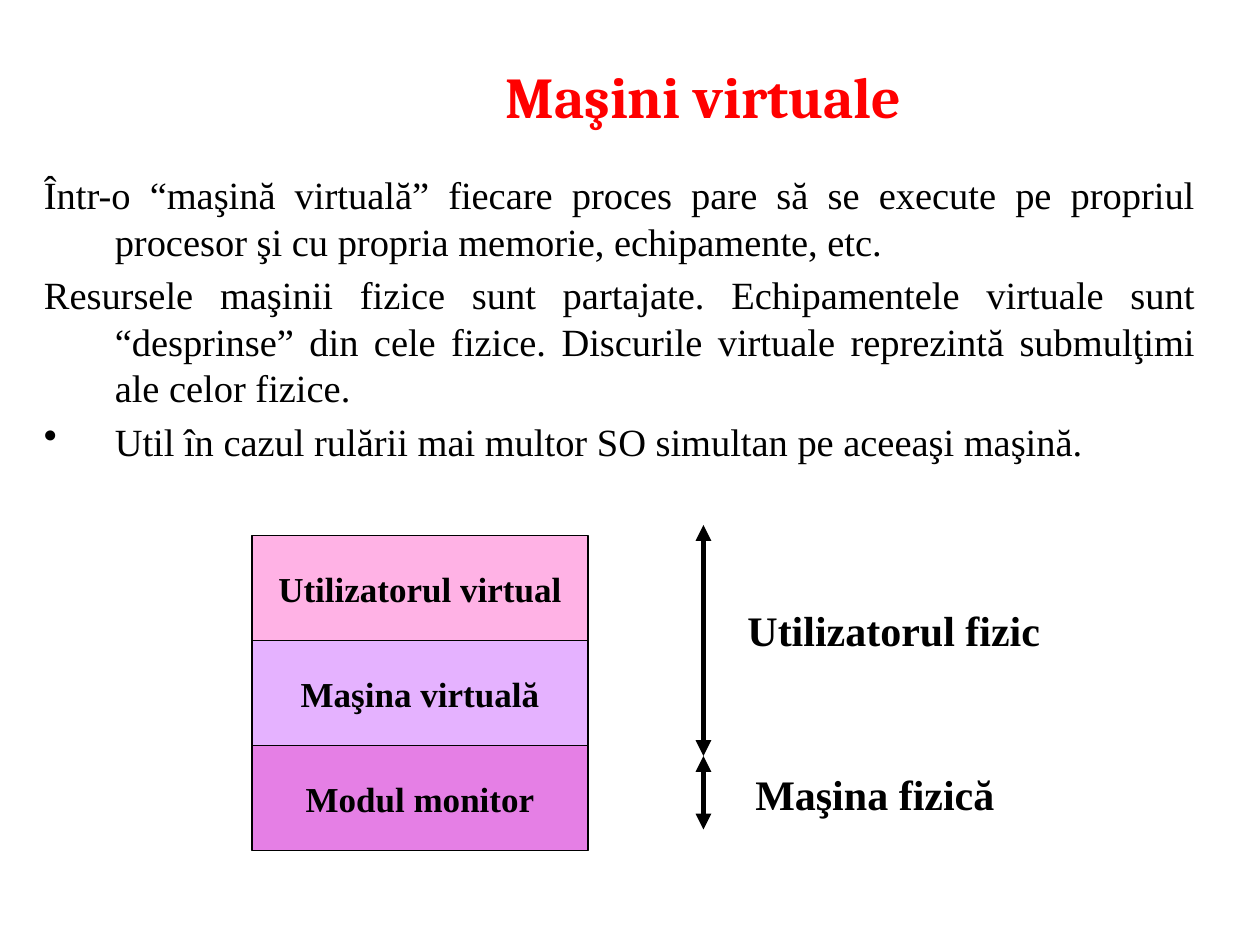
from pptx import Presentation
from pptx.dml.color import RGBColor as Rgb
from pptx.enum.shapes import MSO_CONNECTOR as Conn, MSO_SHAPE as Form
from pptx.enum.text import MSO_ANCHOR as Anchor, MSO_AUTO_SIZE as Auto, PP_ALIGN as Align
from pptx.oxml.ns import qn
from pptx.util import Pt
from lxml.etree import SubElement as Sub

HUES = {"ink": "000000", "title": "FF0000", "user": "FF66CC",
        "virtual": "CC66FF", "monitor": "CC00CC"}
SERIF = "Times New Roman"
HANG = 40.5


class Deck:
    def __init__(self, wide, high):
        self.file = Presentation()
        self.file.slide_width, self.file.slide_height = Pt(wide), Pt(high)
        self.page = self.file.slides.add_slide(self.file.slide_layouts[5])
        self.shapes = self.page.shapes

    def hue(self, name):
        return Rgb.from_string(HUES[name])

    def style(self, para, size, bold=True, align=Align.LEFT, face=SERIF, hue="ink"):
        para.alignment = align
        font = para.font
        font.name, font.size, font.bold = face, Pt(size), bold
        font.color.rgb = self.hue(hue)

    def title(self, text, *area):
        box = self.shapes.title
        box.left, box.top, box.width, box.height = map(Pt, area)
        frame = box.text_frame
        frame.text = text
        frame.vertical_anchor = Anchor.TOP
        frame.auto_size = Auto.SHAPE_TO_FIT_TEXT
        self.style(frame.paragraphs[0], 33, True, Align.CENTER, "Cambria", "title")

    def body(self, items, *area):
        frame = self.shapes.add_textbox(*map(Pt, area)).text_frame
        frame.word_wrap = True
        frame.margin_top = Pt(8)
        for i, (text, dot) in enumerate(items):
            para = frame.add_paragraph() if i else frame.paragraphs[0]
            para.text = text
            if i:
                para.space_before = Pt(4.4)
            props = para._p.get_or_add_pPr()
            props.set("marL", str(Pt(HANG)))
            props.set("indent", str(Pt(-HANG)))
            if dot:
                Sub(props, qn("a:buChar")).set("char", "•")
            self.style(para, 22, False, Align.JUSTIFY)

    def label(self, text, *area):
        frame = self.shapes.add_textbox(*map(Pt, area)).text_frame
        frame.word_wrap = False
        frame.auto_size = Auto.SHAPE_TO_FIT_TEXT
        frame.text = text
        self.style(frame.paragraphs[0], 24)

    def block(self, text, hue, *area):
        box = self.shapes.add_shape(Form.RECTANGLE, *map(Pt, area))
        box.shadow.inherit = False
        box.fill.solid()
        box.fill.fore_color.rgb = self.hue(hue)
        tint = box._element.spPr.find(qn("a:solidFill"))[0]
        Sub(tint, qn("a:alpha")).set("val", "50000")
        box.line.color.rgb = self.hue("ink")
        box.line.width = Pt(0.75)
        frame = box.text_frame
        frame.text = text
        frame.word_wrap = False
        frame.vertical_anchor = Anchor.MIDDLE
        self.style(frame.paragraphs[0], 20, True, Align.CENTER)

    def span(self, x, top, end):
        line = self.shapes.add_connector(Conn.STRAIGHT, Pt(x), Pt(top), Pt(x), Pt(end))
        line.line.color.rgb = self.hue("ink")
        line.line.width = Pt(3)
        stroke = line.line._get_or_add_ln()
        for tip in ("a:headEnd", "a:tailEnd"):
            Sub(stroke, qn(tip)).set("type", "triangle")
        Sub(line._element.spPr, qn("a:effectLst"))


def main():
    deck = Deck(720, 540)
    deck.title("Maşini virtuale", 234, 31, 336, 47.5)
    deck.body([
        ("Într-o “maşină virtuală” fiecare proces pare să se execute pe propriul "
         "procesor şi cu propria memorie, echipamente, etc.", False),
        ("Resursele maşinii fizice sunt partajate. Echipamentele virtuale sunt "
         "“desprinse” din cele fizice. Discurile virtuale reprezintă submulţimi "
         "ale celor fizice.", False),
        ("Util în cazul rulării mai multor SO simultan pe aceeaşi maşină.", True),
    ], 18, 90, 672, 180)
    stack = [("Utilizatorul virtual", "user"), ("Maşina virtuală", "virtual"),
             ("Modul monitor", "monitor")]
    for row, (text, hue) in enumerate(stack):
        deck.block(text, hue, 144, 306 + 60 * row, 192, 60)
    deck.label("Utilizatorul fizic", 420, 342, 181.5, 36)
    deck.label("Maşina fizică", 424.5, 435.5, 151, 36)
    for top, end in ((300, 432), (432, 474)):
        deck.span(402, top, end)
    deck.file.save("out.pptx")


if __name__ == "__main__":
    main()
